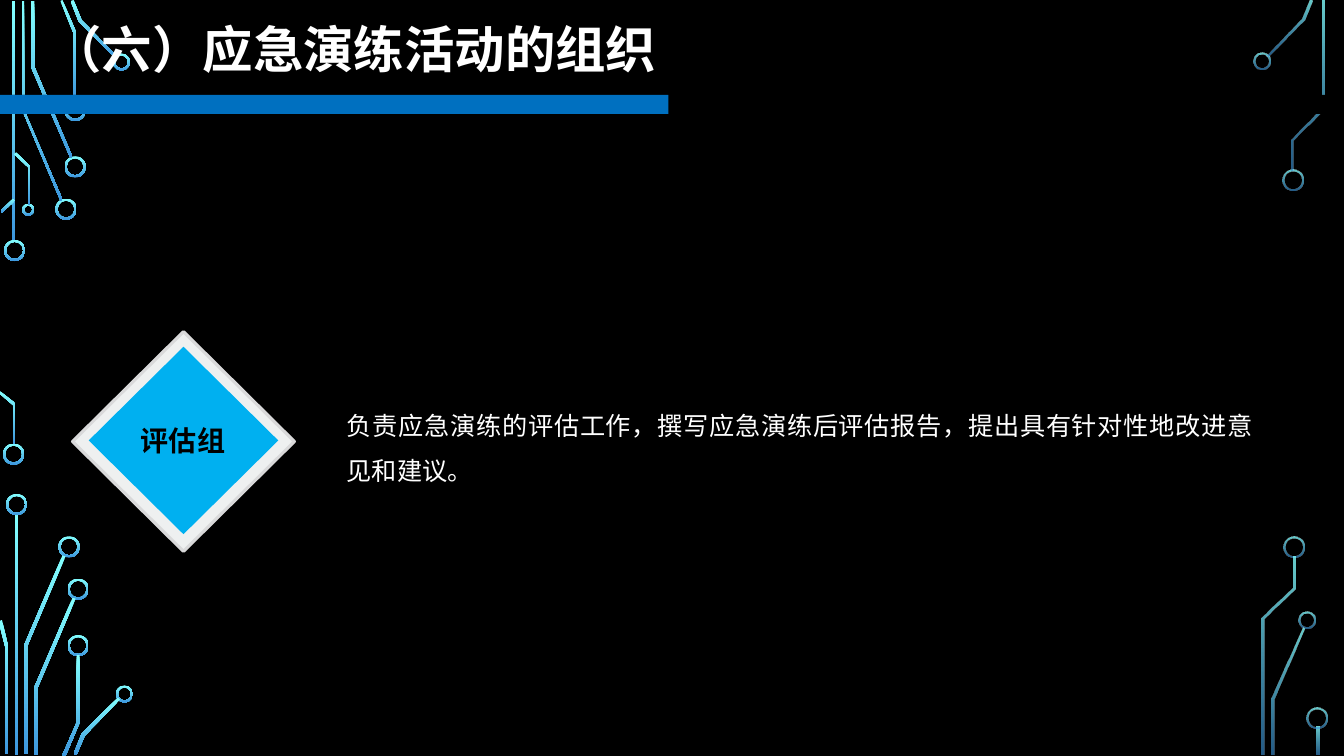
from dataclasses import dataclass

from lxml import etree
from pptx import Presentation
from pptx.dml.color import RGBColor
from pptx.enum.shapes import MSO_SHAPE
from pptx.enum.text import MSO_ANCHOR, MSO_AUTO_SIZE, PP_ALIGN
from pptx.oxml.ns import qn
from pptx.util import Pt

RECTANGLE, DIAMOND, DONUT = MSO_SHAPE.RECTANGLE, MSO_SHAPE.DIAMOND, MSO_SHAPE.DONUT
TOP, MIDDLE = MSO_ANCHOR.TOP, MSO_ANCHOR.MIDDLE
LEFT, JUSTIFY = PP_ALIGN.LEFT, PP_ALIGN.JUSTIFY
NO_AUTOFIT = MSO_AUTO_SIZE.NONE

PX = 9144  # EMU per px, 100 px to the inch
FONT = "Noto Sans CJK SC"
RING_LINE = 2
COLORS = {
    "black": "000000",
    "white": "FFFFFF",
    "bar": "0070C0",
    "trace_top": "82FFFF",
    "trace_bottom": "3D97DE",
    "frame": "EEF0F0",
    "frame_line": "D9D9DA",
    "diamond": "00B0F0",
}


@dataclass(frozen=True)
class Block:
    kind: int
    left: int
    top: int
    width: int
    height: int
    color: str = ""
    line: str = ""


@dataclass(frozen=True)
class Circuit:
    opacity: tuple  # percent at the top and the bottom of each part
    rings: tuple  # left, top, size
    stems: tuple  # left, top, width, height
    traces: tuple  # outline points


@dataclass(frozen=True)
class Label:
    text: str
    left: int
    top: int
    width: int
    height: int
    size: int
    color: str
    bold: bool = False
    wrap: bool = True
    align: int = LEFT
    anchor: int = TOP
    spacing: float = 1.0


LEFT_CIRCUIT = Circuit(
    opacity=(100, 100),
    rings=(
        (4, 238, 21), (3, 440, 21), (55, 197, 21), (64, 155, 21), (64, 99, 21),
        (112, 53, 17), (22, 202, 12), (6, 490, 21), (58, 532, 21),
        (67, 574, 21), (67, 630, 21), (115, 680, 17),
    ),
    stems=((12, 1, 3, 239), (15, 510, 3, 239)),
    traces=(
        ((60, 199), (22, 109), (22, 1), (24, 1), (24, 109), (62, 198)),
        ((70, 157), (31, 67), (31, 1), (34, 1), (34, 66), (72, 156)),
        ((76, 100), (73, 100), (73, 33), (60, 1), (62, 0), (76, 33)),
        ((115, 58), (78, 21), (70, 1), (73, 0), (81, 20), (116, 56)),
        ((2, 211), (1, 209), (13, 197), (15, 199)),
        ((15, 441), (13, 441), (13, 402), (0, 391), (0, 388), (15, 400)),
        ((30, 203), (28, 203), (28, 166), (14, 153), (16, 151), (30, 165)),
        ((27, 748), (24, 748), (24, 640), (62, 551), (65, 552), (27, 641)),
        ((8, 748), (5, 748), (5, 641), (0, 622), (0, 616), (2, 615), (8, 641)),
        ((37, 749), (34, 749), (34, 682), (72, 593), (75, 594), (37, 683)),
        ((65, 750), (62, 749), (76, 717), (76, 650), (79, 650), (79, 717)),
        ((76, 749), (73, 748), (81, 728), (117, 692), (119, 694), (84, 730)),
    ),
)
RIGHT_CIRCUIT = Circuit(
    opacity=(80, 60),
    rings=(
        (1243, 52, 17), (1272, 168, 21), (1288, 607, 17),
        (1273, 532, 21), (1296, 702, 21),
    ),
    stems=((1306, 721, 3, 28),),
    traces=(
        ((1258, 56), (1256, 55), (1291, 19), (1299, 0), (1302, 1), (1294, 20)),
        ((1264, 749), (1261, 749), (1261, 693), (1292, 623), (1294, 624), (1264, 694)),
        ((1283, 169), (1281, 169), (1281, 138), (1311, 107), (1311, 1),
         (1314, 1), (1314, 108), (1283, 139)),
        ((1254, 749), (1251, 749), (1251, 613), (1282, 583), (1282, 552),
         (1285, 552), (1285, 584), (1254, 614)),
    ),
)
BLOCKS = (
    Block(DIAMOND, 72, 329, 220, 218, "frame", "frame_line"),
    Block(DIAMOND, 88, 344, 188, 186, "diamond"),
    Block(RECTANGLE, 0, 94, 1333, 19, "black"),
    Block(RECTANGLE, 0, 94, 663, 19, "bar"),
)
TITLE = Label("（六）应急演练活动的组织", 41, 19, 626, 65, 36, "white",
              bold=True, anchor=MIDDLE, spacing=0.9)
LABELS = (
    Label("评估组", 130, 415, 104, 44, 20, "black", bold=True, wrap=False),
    Label("负责应急演练的评估工作，撰写应急演练后评估报告，提出具有针对性地改进意见和建议。",
          334, 387, 919, 101, 18, "white", align=JUSTIFY, spacing=1.5),
)


def rgb(name: str) -> RGBColor:
    return RGBColor.from_string(COLORS[name])


def add_block(slide, block: Block):
    box = (block.left, block.top, block.width, block.height)
    shape = slide.shapes.add_shape(block.kind, *(side * PX for side in box))
    shape.shadow.inherit = False
    if block.color:
        shape.fill.solid()
        shape.fill.fore_color.rgb = rgb(block.color)
    if block.line:
        shape.line.color.rgb = rgb(block.line)
        shape.line.width = Pt(2.25)
    else:
        shape.line.fill.background()
    return shape


def paint_gradient(shape, opacity: tuple) -> None:
    shape.fill.gradient()
    shape.fill.gradient_angle = 270
    for stop, name in zip(shape.fill.gradient_stops, ("trace_top", "trace_bottom")):
        stop.color.rgb = rgb(name)
    for color, percent in zip(shape._element.spPr.iter(qn("a:srgbClr")), opacity):
        if percent < 100:
            etree.SubElement(color, qn("a:alpha"), val=str(percent * 1000))


def add_circuit(slide, circuit: Circuit) -> None:
    for stem in circuit.stems:
        paint_gradient(add_block(slide, Block(RECTANGLE, *stem)), circuit.opacity)
    for left, top, size in circuit.rings:
        ring = add_block(slide, Block(DONUT, left, top, size, size))
        ring.adjustments[0] = RING_LINE / size
        paint_gradient(ring, circuit.opacity)
    for start, *others in circuit.traces:
        builder = slide.shapes.build_freeform(*start, scale=PX)
        builder.add_line_segments(others, close=True)
        trace = builder.convert_to_shape()
        trace.shadow.inherit = False
        trace.line.fill.background()
        paint_gradient(trace, circuit.opacity)


def write_label(shape, label: Label) -> None:
    shape.left, shape.top = label.left * PX, label.top * PX
    shape.width, shape.height = label.width * PX, label.height * PX
    frame = shape.text_frame
    frame.text = label.text
    frame.auto_size = NO_AUTOFIT
    frame.word_wrap = label.wrap
    frame.vertical_anchor = label.anchor
    paragraph = frame.paragraphs[0]
    paragraph.alignment = label.align
    paragraph.line_spacing = label.spacing
    font = paragraph.font
    font.size, font.bold, font.name = Pt(label.size), label.bold, FONT
    font.color.rgb = rgb(label.color)
    etree.SubElement(font._rPr, qn("a:ea"), typeface=FONT)


def main() -> None:
    presentation = Presentation()
    presentation.slide_width, presentation.slide_height = 1333 * PX, 750 * PX
    slide = presentation.slides.add_slide(presentation.slide_layouts[5])
    slide.background.fill.solid()
    slide.background.fill.fore_color.rgb = rgb("black")

    # Circuit decoration on both sides
    for circuit in (LEFT_CIRCUIT, RIGHT_CIRCUIT):
        add_circuit(slide, circuit)

    # Diamond and title bar
    for block in BLOCKS:
        add_block(slide, block)

    # Texts, with the title in front of the circuit
    for label in LABELS:
        write_label(slide.shapes.add_textbox(0, 0, PX, PX), label)
    title = slide.shapes.title
    write_label(title, TITLE)
    slide.shapes._spTree.append(title._element)

    presentation.save("out.pptx")


if __name__ == "__main__":
    main()
